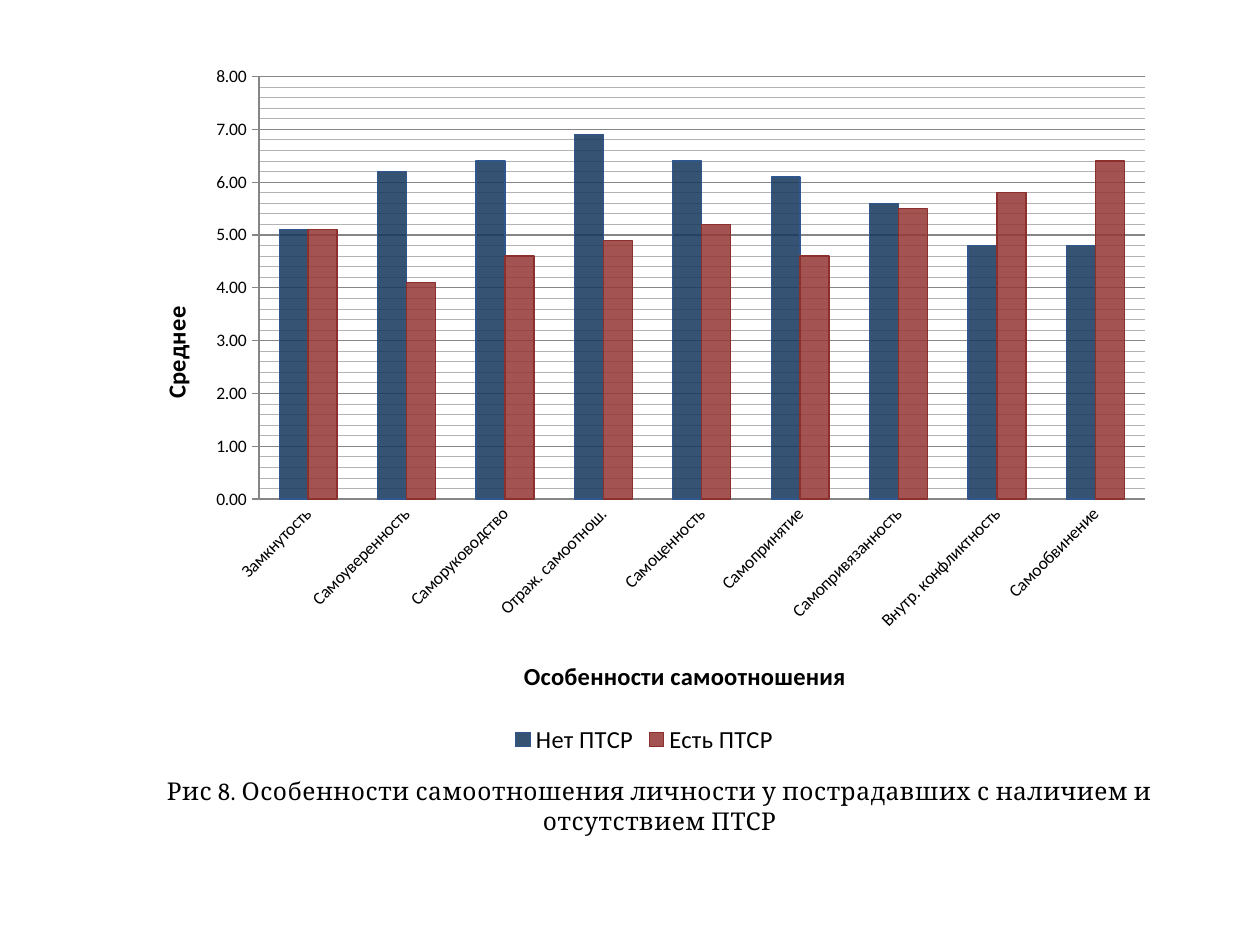
from pptx import Presentation
from pptx.chart.data import CategoryChartData
from pptx.dml.color import RGBColor
from pptx.enum.chart import XL_CHART_TYPE, XL_LEGEND_POSITION, XL_TICK_MARK
from pptx.enum.text import MSO_ANCHOR, PP_ALIGN
from pptx.oxml import parse_xml
from pptx.oxml.ns import nsdecls, qn
from pptx.oxml.xmlchemy import OxmlElement
from pptx.util import Inches, Pt

BLACK = RGBColor(0x00, 0x00, 0x00)
AXIS_GREY = RGBColor(0x86, 0x86, 0x86)
MINOR_GREY = RGBColor(0xB3, 0xB3, 0xB3)
NAVY = RGBColor(0x17, 0x37, 0x5E)
NAVY_EDGE = RGBColor(0x2F, 0x57, 0x8D)
RED = RGBColor(0x95, 0x37, 0x35)
RED_EDGE = RGBColor(0x8C, 0x30, 0x2E)

CAPTION = ("Рис 8. Особенности самоотношения личности у пострадавших "
           "с наличием и отсутствием ПТСР")
TRAITS = ["Замкнутость", "Самоуверенность", "Саморуководство",
          "Отраж. самоотнош.", "Самоценность", "Самопринятие",
          "Самопривязанность", "Внутр. конфликтность", "Самообвинение"]
GROUPS = [
    ("Нет ПТСР", [5.1, 6.2, 6.4, 6.9, 6.4, 6.1, 5.6, 4.8, 4.8], NAVY, NAVY_EDGE),
    ("Есть ПТСР", [5.1, 4.1, 4.6, 4.9, 5.2, 4.6, 5.5, 5.8, 6.4], RED, RED_EDGE),
]


def manual_layout(x, y, width=None, height=None):
    """Return a c:layout element; all numbers are fractions of the chart."""
    target = '<c:layoutTarget val="inner"/>' if width else ""
    size = f'<c:w val="{width}"/><c:h val="{height}"/>' if width else ""
    return parse_xml(
        f'<c:layout {nsdecls("c")}><c:manualLayout>{target}'
        '<c:xMode val="edge"/><c:yMode val="edge"/>'
        f'<c:x val="{x}"/><c:y val="{y}"/>{size}'
        '</c:manualLayout></c:layout>')


def style_line(line, color, width):
    line.color.rgb = color
    line.width = Pt(width)


def style_minor_gridlines(axis, color, width):
    gridlines = axis._element.find(qn("c:minorGridlines"))
    gridlines.append(parse_xml(
        f'<c:spPr {nsdecls("c", "a")}><a:ln w="{Pt(width)}"><a:solidFill>'
        f'<a:srgbClr val="{color}"/></a:solidFill></a:ln></c:spPr>'))


def add_axis_title(axis, text, x, y):
    frame = axis.axis_title.text_frame
    frame.text = text
    font = frame.paragraphs[0].runs[0].font
    font.size, font.bold, font.name = Pt(14), True, "Calibri"
    font.color.rgb = BLACK
    title = axis.axis_title._element
    for old_layout in title.findall(qn("c:layout")):
        title.remove(old_layout)
    title.find(qn("c:tx")).addnext(manual_layout(x, y))


def style_trait_axis(axis):
    axis.major_tick_mark = XL_TICK_MARK.NONE
    style_line(axis.format.line, AXIS_GREY, 0.75)
    axis.tick_labels.font.size = Pt(10)
    axis._element.find(qn("c:txPr")).find(qn("a:bodyPr")).set("rot", "-2700000")
    add_axis_title(axis, "Особенности самоотношения", 0.38, 0.85)


def style_mean_axis(axis):
    axis.minimum_scale, axis.maximum_scale = 0, 8
    axis.major_unit, axis.minor_unit = 1, 0.2
    axis.major_tick_mark = XL_TICK_MARK.OUTSIDE
    axis.has_major_gridlines = axis.has_minor_gridlines = True
    style_line(axis.major_gridlines.format.line, AXIS_GREY, 0.75)
    style_minor_gridlines(axis, MINOR_GREY, 0.5)
    style_line(axis.format.line, AXIS_GREY, 0.75)
    axis.tick_labels.number_format = "0.00"
    axis.tick_labels.number_format_is_linked = False
    axis.tick_labels.font.size = Pt(10)
    add_axis_title(axis, "Среднее", 0.03, 0.35)


def add_group_chart(slide, left, top, width, height):
    chart_data = CategoryChartData(number_format="0.0")
    chart_data.categories = TRAITS
    for name, means, _, _ in GROUPS:
        chart_data.add_series(name, means)
    chart = slide.shapes.add_chart(XL_CHART_TYPE.COLUMN_CLUSTERED, left, top,
                                   width, height, chart_data).chart
    chart.has_title = False
    chart.font.size, chart.font.name = Pt(10), "Calibri"
    chart.font.color.rgb = BLACK

    plot = chart.plots[0]
    plot.gap_width, plot.overlap = 140, 0
    plot.vary_by_categories = False
    for series, (_, _, color, edge) in zip(plot.series, GROUPS):
        series.format.fill.solid()
        series.format.fill.fore_color.rgb = color
        fill_color = series.format.fill._xPr.find(qn("a:solidFill"))[0]
        alpha = OxmlElement("a:alpha")
        alpha.set("val", "86000")
        fill_color.append(alpha)
        style_line(series.format.line, edge, 0.75)

    style_trait_axis(chart.category_axis)
    style_mean_axis(chart.value_axis)
    chart.has_legend = True
    chart.legend.position = XL_LEGEND_POSITION.BOTTOM
    chart.legend.include_in_layout = False
    chart.legend.font.size = Pt(14)

    plot_area = chart._chartSpace.chart.plotArea
    for old_layout in plot_area.findall(qn("c:layout")):
        plot_area.remove(old_layout)
    plot_area.insert(0, manual_layout(0.13, 0.03, 0.85, 0.6))


def place_caption(caption, left, top, width, height):
    caption.left, caption.top = left, top
    caption.width, caption.height = width, height
    frame = caption.text_frame
    frame.text = CAPTION
    frame.vertical_anchor = MSO_ANCHOR.TOP
    paragraph = frame.paragraphs[0]
    properties = paragraph._p.get_or_add_pPr()
    properties.set("marL", "0")
    properties.set("indent", "0")
    properties.append(OxmlElement("a:buNone"))
    paragraph.alignment = PP_ALIGN.CENTER
    paragraph.space_before = Pt(0)
    run = paragraph.runs[0]
    run.font.size, run.font.name = Pt(14), "Cambria"
    run.font.color.rgb = BLACK
    run._r.get_or_add_rPr().set("spc", "30")


def main():
    deck = Presentation()
    deck.slide_width, deck.slide_height = Inches(10), Inches(7.5)
    slide = deck.slides.add_slide(deck.slide_layouts[1])
    empty_title = slide.shapes.title.element
    empty_title.getparent().remove(empty_title)
    place_caption(slide.placeholders[1],
                  Inches(1.22), Inches(6.11), Inches(8.03), Inches(0.64))
    add_group_chart(slide, Inches(0.98), Inches(0.44), Inches(8.27), Inches(5.59))
    deck.save("out.pptx")


if __name__ == "__main__":
    main()
